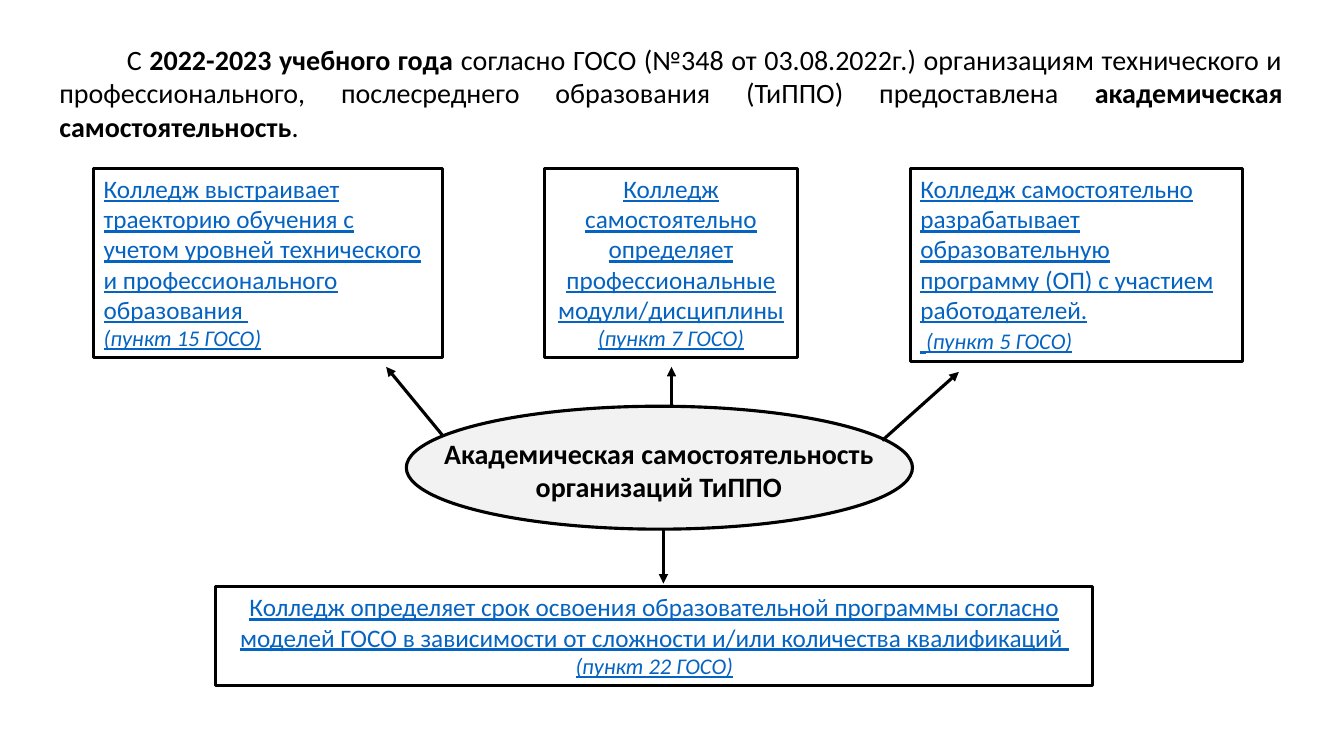
from lxml.etree import SubElement
from pptx import Presentation
from pptx.dml.color import RGBColor
from pptx.enum.shapes import MSO_CONNECTOR, MSO_SHAPE
from pptx.enum.text import MSO_ANCHOR, MSO_AUTO_SIZE, PP_ALIGN
from pptx.oxml.ns import qn
from pptx.util import Inches, Pt

COLORS = {"text": "000000", "line": "000000", "link": "0563C1", "oval": "F2F2F2"}
FONT = "Calibri"
LINE_WIDTH = Pt(2.25)

INTRO = [
    ("С ", False),
    ("2022-2023 учебного года ", True),
    ("согласно ГОСО (№348 от 03.08.2022г.) организациям технического и "
     "профессионального, послесреднего образования (ТиППО) предоставлена ", False),
    ("академическая самостоятельность", True),
    (".", False),
]

# position and size, alignment, right, clause lead-in, clause number
RIGHTS = [
    ((0.93, 1.67, 3.46, 1.88), PP_ALIGN.LEFT,
     "Колледж выстраивает траекторию обучения с учетом уровней технического "
     "и профессионального образования ", "", 15),
    ((5.4, 1.67, 2.51, 1.88), PP_ALIGN.CENTER,
     "Колледж самостоятельно определяет профессиональные модули/дисциплины", "", 7),
    ((9.03, 1.67, 3.29, 1.92), PP_ALIGN.LEFT,
     "Колледж самостоятельно разрабатывает образовательную программу (ОП) "
     "с участием работодателей.", " ", 5),
    ((2.14, 5.82, 8.7, 0.98), PP_ALIGN.CENTER,
     "Колледж определяет срок освоения образовательной программы согласно моделей "
     "ГОСО в зависимости от сложности и/или количества квалификаций ", "", 22),
]

ARROWS = [
    ((4.39, 4.32), (3.83, 3.64)),
    ((8.75, 4.37), (9.51, 3.69)),
    ((6.66, 4.02), (6.66, 3.64)),
    ((6.58, 5.25), (6.58, 5.79)),
]


def rgb(name):
    return RGBColor.from_string(COLORS[name])


def set_font(font, size, color):
    font.name = FONT
    font.size = Pt(size)
    font.color.rgb = rgb(color)


def add_outline(slide, preset, box, fill=None):
    sp = slide.shapes.add_shape(preset, *map(Inches, box))
    sp.shadow.inherit = False
    if fill:
        sp.fill.solid()
        sp.fill.fore_color.rgb = rgb(fill)
    else:
        sp.fill.background()
    sp.line.color.rgb = rgb("line")
    sp.line.width = LINE_WIDTH
    return sp


def add_text(slide, box, runs, align, indent=0):
    """Add a 20 pt paragraph of (text, bold) runs with a first-line indent."""
    tf = slide.shapes.add_textbox(*map(Inches, box)).text_frame
    tf.word_wrap = True
    tf.auto_size = MSO_AUTO_SIZE.SHAPE_TO_FIT_TEXT
    p = tf.paragraphs[0]
    p.alignment = align
    set_font(p.font, 20, "text")
    if indent:
        p._p.get_or_add_pPr().set("indent", str(Inches(indent)))
    for text, bold in runs:
        r = p.add_run()
        r.text = text
        r.font.bold = bold


def add_right(slide, box, align, right, lead, clause):
    """Add a framed college right with its clause of the standard below."""
    tf = add_outline(slide, MSO_SHAPE.RECTANGLE, box).text_frame
    tf.word_wrap = True
    tf.auto_size = MSO_AUTO_SIZE.SHAPE_TO_FIT_TEXT
    tf.vertical_anchor = MSO_ANCHOR.TOP
    lines = [
        [(right, 18, False)],
        [(lead, 18, False), (f"(пункт {clause} ГОСО)", 16, True)],
    ]
    for i, line in enumerate(lines):
        p = tf.add_paragraph() if i else tf.paragraphs[0]
        p.alignment = align
        for text, size, italic in line:
            if text:
                r = p.add_run()
                r.text = text
                set_font(r.font, size, "link")
                r.font.underline = True
                r.font.italic = italic


def add_arrow(slide, start, end):
    line = slide.shapes.add_connector(MSO_CONNECTOR.STRAIGHT, *map(Inches, start + end))
    line.line.color.rgb = rgb("line")
    line.line.width = LINE_WIDTH
    SubElement(line.line._get_or_add_ln(), qn("a:tailEnd"), type="triangle")
    SubElement(line._element.spPr, qn("a:effectLst"))


def main():
    prs = Presentation()
    prs.slide_width, prs.slide_height = Inches(13.33), Inches(7.5)
    slide = prs.slides.add_slide(prs.slide_layouts[6])

    add_outline(slide, MSO_SHAPE.OVAL, (4.03, 4.03, 5.02, 1.22), "oval")
    add_text(slide, (4.05, 4.28, 4.97, 0.77),
             [("Академическая самостоятельность организаций ТиППО", True)],
             PP_ALIGN.CENTER)
    for right in RIGHTS:
        add_right(slide, *right)
    for start, end in ARROWS:
        add_arrow(slide, start, end)
    add_text(slide, (0.49, 0.37, 12.33, 1.11), INTRO, PP_ALIGN.JUSTIFY, indent=0.67)

    prs.save("out.pptx")


if __name__ == "__main__":
    main()
